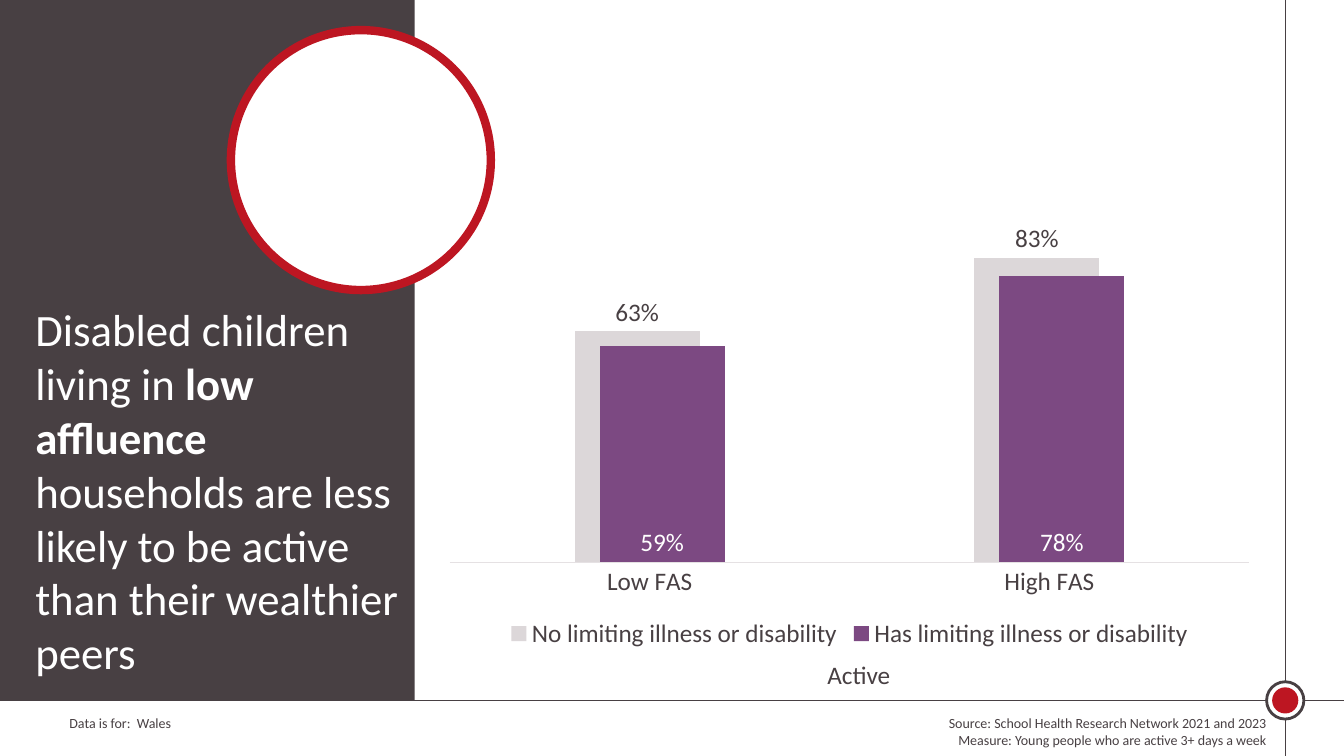
from dataclasses import dataclass

from lxml import etree
from pptx import Presentation
from pptx.chart.data import CategoryChartData
from pptx.dml.color import RGBColor
from pptx.enum.chart import XL_CHART_TYPE, XL_LABEL_POSITION, XL_LEGEND_POSITION, XL_TICK_MARK
from pptx.enum.shapes import MSO_CONNECTOR, MSO_SHAPE
from pptx.enum.text import MSO_AUTO_SIZE, PP_ALIGN
from pptx.oxml.ns import qn
from pptx.util import Cm, Pt

COLUMNS = XL_CHART_TYPE.COLUMN_CLUSTERED
OUTSIDE_END = XL_LABEL_POSITION.OUTSIDE_END
INSIDE_BASE = XL_LABEL_POSITION.INSIDE_BASE
LEGEND_BOTTOM = XL_LEGEND_POSITION.BOTTOM
NO_TICKS = XL_TICK_MARK.NONE
STRAIGHT = MSO_CONNECTOR.STRAIGHT
RECTANGLE = MSO_SHAPE.RECTANGLE
OVAL = MSO_SHAPE.OVAL
GROW = MSO_AUTO_SIZE.SHAPE_TO_FIT_TEXT
LEFT, RIGHT = PP_ALIGN.LEFT, PP_ALIGN.RIGHT


@dataclass(frozen=True)
class Theme:
    font: str = "Calibri"
    dark: RGBColor = RGBColor(0x48, 0x40, 0x43)
    red: RGBColor = RGBColor(0xBD, 0x16, 0x22)
    purple: RGBColor = RGBColor(0x7C, 0x49, 0x82)
    grey: RGBColor = RGBColor(0xDC, 0xD7, 0xD9)
    axis: RGBColor = RGBColor(0xE5, 0xE1, 0xE3)
    white: RGBColor = RGBColor(0xFF, 0xFF, 0xFF)
    headline: Pt = Pt(32)
    body: Pt = Pt(18)
    note: Pt = Pt(10)


THEME = Theme()
SLIDE_WIDTH, SLIDE_HEIGHT = Cm(33.87), Cm(19.05)
MARGIN_X, FOOTER_Y = Cm(32.39), Cm(17.65)


def set_font(font, size, color):
    font.name, font.size, font.color.rgb = THEME.font, size, color


def add_text(slide, box, paragraphs, size, color, align=LEFT):
    """Place paragraphs, each a list of (text, bold) runs."""
    frame = slide.shapes.add_textbox(*box).text_frame
    frame.word_wrap = True
    frame.auto_size = GROW
    for index, runs in enumerate(paragraphs):
        paragraph = frame.paragraphs[0] if index == 0 else frame.add_paragraph()
        paragraph.alignment = align
        set_font(paragraph.font, size, color)
        for text, bold in runs:
            run = paragraph.add_run()
            run.text = text
            if bold:
                run.font.bold = True


def add_filled(shapes, kind, box, fill, line=None, width=None):
    shape = shapes.add_shape(kind, *box)
    shape.shadow.inherit = False
    shape.fill.solid()
    shape.fill.fore_color.rgb = fill
    if line is None:
        shape.line.fill.background()
    else:
        shape.line.color.rgb = line
        shape.line.width = width


def add_rule(slide, start, end):
    rule = slide.shapes.add_connector(STRAIGHT, *start, *end)
    rule.line.color.rgb = THEME.dark
    rule.line.width = Pt(1)
    etree.SubElement(rule._element.spPr, qn("a:effectLst"))


def add_frame(slide, width, height):
    """Draw the crossing rules and the target on their crossing."""
    add_rule(slide, (MARGIN_X, 0), (MARGIN_X, height))
    add_rule(slide, (0, FOOTER_Y), (width, FOOTER_Y))
    target = slide.shapes.add_group_shape().shapes
    for diameter, fill, line in ((Cm(0.94), THEME.white, THEME.dark),
                                 (Cm(0.66), THEME.red, None)):
        corner = MARGIN_X - diameter // 2, FOOTER_Y - diameter // 2
        add_filled(target, OVAL, (*corner, diameter, diameter), fill, line, Pt(2))


def add_message_panel(slide, left, top, width, height):
    add_filled(slide.shapes, RECTANGLE, (left, top, width, height), THEME.dark)
    add_filled(slide.shapes, OVAL, (left + Cm(5.82), top + Cm(0.76), Cm(6.55), Cm(6.55)),
               THEME.white, THEME.red, Pt(6))
    message = [("Disabled children living in ", False), ("low affluence", True),
               (" households are less likely to be active than their wealthier peers", False)]
    add_text(slide, (left + Cm(0.64), top + Cm(7.49), Cm(10.31), Cm(11.2)),
             [message], THEME.headline, THEME.white)


def add_activity_chart(slide, left, top, width, height):
    data = CategoryChartData(number_format="0%")
    data.categories = ["Low FAS", "High FAS"]
    data.add_series("No limiting illness or disability", (0.63, 0.83))
    data.add_series("Has limiting illness or disability", (0.59, 0.78))
    caption_height = Cm(1.02)
    chart_height = height - caption_height
    chart = slide.shapes.add_chart(COLUMNS, left, top, width, chart_height, data).chart
    set_font(chart.font, THEME.body, THEME.dark)
    chart.has_title = False
    chart.has_legend = True
    chart.legend.position = LEGEND_BOTTOM
    chart.legend.include_in_layout = False
    set_font(chart.legend.font, THEME.body, THEME.dark)

    affluence, share = chart.category_axis, chart.value_axis
    affluence.major_tick_mark = NO_TICKS
    affluence.format.line.color.rgb = THEME.axis
    affluence.format.line.width = Pt(0.75)
    set_font(affluence.tick_labels.font, THEME.body, THEME.dark)
    share.minimum_scale, share.maximum_scale = 0, 1
    share.has_major_gridlines = False
    share.visible = False

    plot = chart.plots[0]
    plot.vary_by_categories = False
    plot.gap_width, plot.overlap = 200, 80
    styles = ((THEME.grey, THEME.dark, OUTSIDE_END), (THEME.purple, THEME.white, INSIDE_BASE))
    for series, (fill, label_color, position) in zip(plot.series, styles):
        series.format.fill.solid()
        series.format.fill.fore_color.rgb = fill
        labels = series.data_labels
        labels.show_value = True
        labels.number_format, labels.number_format_is_linked = "0%", False
        labels.position = position
        set_font(labels.font, THEME.body, label_color)

    add_text(slide, (left + Cm(9.68), top + chart_height, Cm(3.1), caption_height),
             [[("Active", False)]], THEME.body, THEME.dark)


def add_footer(slide, left, top, width):
    coverage_width, source_width = Cm(11.15), Cm(16.43)
    add_text(slide, (left, top, coverage_width, Cm(0.69)),
             [[("Data is for:  Wales", False)]], THEME.note, THEME.dark)
    add_text(slide, (left + width - source_width, top, source_width, Cm(1.12)),
             [[("Source: School Health Research Network 2021 and 2023", False)],
              [("Measure: Young people who are active 3+ days a week", False)]],
             THEME.note, THEME.dark, RIGHT)


def main():
    presentation = Presentation()
    presentation.slide_width, presentation.slide_height = SLIDE_WIDTH, SLIDE_HEIGHT
    slide = presentation.slides.add_slide(presentation.slide_layouts[6])
    add_frame(slide, SLIDE_WIDTH, SLIDE_HEIGHT)
    add_message_panel(slide, 0, 0, Cm(10.45), FOOTER_Y)
    add_footer(slide, Cm(1.5), Cm(17.88), Cm(30.66))
    add_activity_chart(slide, Cm(10.92), Cm(4.7), Cm(20.98), Cm(12.8))
    presentation.save("out.pptx")


if __name__ == "__main__":
    main()
